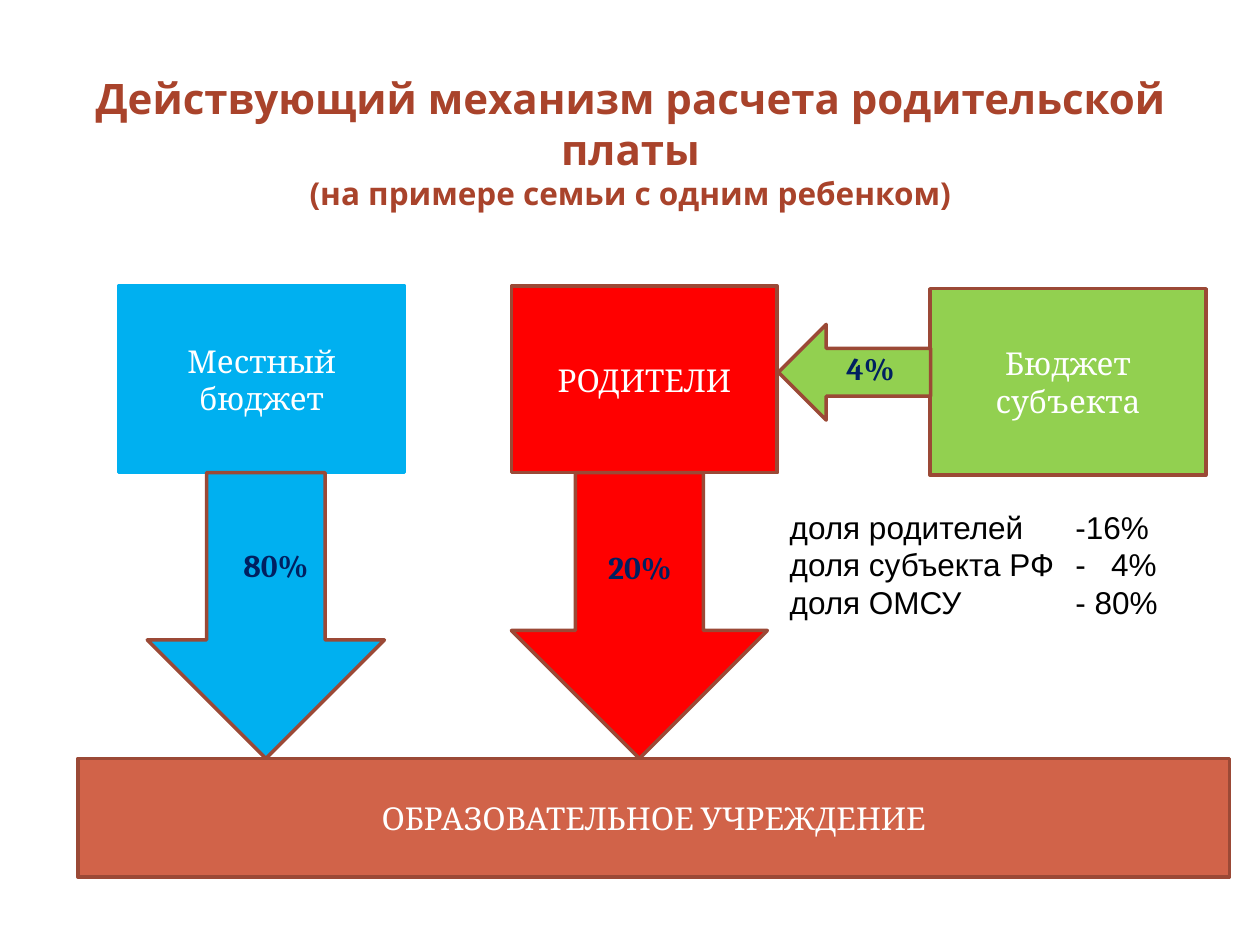
"""Build a slide on how the parental fee is shared between payers."""
from dataclasses import dataclass

from pptx import Presentation
from pptx.dml.color import RGBColor
from pptx.enum.shapes import MSO_SHAPE
from pptx.enum.text import MSO_ANCHOR, MSO_AUTO_SIZE, PP_ALIGN
from pptx.oxml import parse_xml
from pptx.oxml.ns import nsdecls
from pptx.util import Cm, Pt

RECT, DOWN = MSO_SHAPE.RECTANGLE, MSO_SHAPE.DOWN_ARROW
MIDDLE, TOP = MSO_ANCHOR.MIDDLE, MSO_ANCHOR.TOP
CENTER, LEFT = PP_ALIGN.CENTER, PP_ALIGN.LEFT
NO_FIT = MSO_AUTO_SIZE.NONE

BLUE, RED, GREEN, CLAY = "00B0F0", "FF0000", "92D050", "D16349"
EDGE, NAVY, WHITE, BLACK, RUST = "9B4936", "002060", "FFFFFF", "000000", "A9432B"

TITLE_FMT = {"name": "Open Sans", "size": Pt(24), "bold": True}
SUBTITLE_FMT = {**TITLE_FMT, "size": Pt(18)}
BLOCK_FMT = {"name": "Cambria", "size": Pt(18), "bold": False}
SHARE_FMT = {**BLOCK_FMT, "bold": True}
LIST_FMT = {**BLOCK_FMT, "name": "Arial"}


@dataclass
class Block:
    x: float
    y: float
    w: float
    h: float
    fill: str
    text: str = ""
    line: str = EDGE
    kind: int = RECT
    rotation: float = 0


@dataclass
class Share:
    x: float
    y: float
    w: float
    text: str


BLOCKS = [
    Block(2.39, 5.77, 5.77, 3.76, BLUE, "Местный бюджет", line=BLUE),
    Block(10.31, 5.77, 5.36, 3.76, RED, "РОДИТЕЛИ"),
    Block(18.75, 5.82, 5.56, 3.76, GREEN, "Бюджет субъекта"),
    Block(1.57, 15.29, 23.22, 2.39, CLAY, "ОБРАЗОВАТЕЛЬНОЕ УЧРЕЖДЕНИЕ"),
    Block(2.97, 9.53, 4.78, 5.76, BLUE, kind=DOWN),
    Block(10.31, 9.53, 5.16, 5.76, RED, kind=DOWN),
    Block(16.26, 5.97, 1.93, 3.07, GREEN, kind=DOWN, rotation=90),
]
SHARES = [
    Share(10.92, 10.92, 3.96, "20%"),
    Share(3.58, 10.87, 3.96, "80%"),
    Share(16.46, 6.91, 2.18, "4%"),
]
BREAKDOWN = [
    "доля родителей\t-16%",
    "доля субъекта РФ\t-\t4%",
    "доля ОМСУ\t- 80%",
]
TABS = [(5.76, "l"), (7.4, "r")]


def color(value: str) -> RGBColor:
    return RGBColor.from_string(value)


def add_run(p, text: str, fmt: dict, ink: str) -> None:
    r = p.add_run()
    r.text = text
    for name, value in fmt.items():
        setattr(r.font, name, value)
    r.font.color.rgb = color(ink)


def set_frame(tf, anchor, wrap: bool = True) -> None:
    for name, value in {"word_wrap": wrap, "auto_size": NO_FIT, "vertical_anchor": anchor}.items():
        setattr(tf, name, value)


def fill_title(sp) -> None:
    place = {"left": 0.99, "top": 0.58, "width": 23.44, "height": 4.57}
    for name, value in place.items():
        setattr(sp, name, Cm(value))
    set_frame(sp.text_frame, MIDDLE)
    p = sp.text_frame.paragraphs[0]
    p.alignment = CENTER
    add_run(p, "Действующий механизм расчета родительской платы", TITLE_FMT, RUST)
    p.add_line_break()
    add_run(p, "(на примере семьи с одним ребенком)", SUBTITLE_FMT, RUST)


def add_block(slide, b: Block) -> None:
    sp = slide.shapes.add_shape(b.kind, Cm(b.x), Cm(b.y), Cm(b.w), Cm(b.h))
    sp.shadow.inherit = False
    sp.rotation = b.rotation
    sp.fill.solid()
    sp.fill.fore_color.rgb = color(b.fill)
    sp.line.color.rgb = color(b.line)
    sp.line.width = Pt(2)
    if b.text:
        set_frame(sp.text_frame, MIDDLE)
        p = sp.text_frame.paragraphs[0]
        p.alignment = CENTER
        add_run(p, b.text, BLOCK_FMT, WHITE)


def add_share(slide, s: Share) -> None:
    tf = slide.shapes.add_textbox(Cm(s.x), Cm(s.y), Cm(s.w), Cm(1.02)).text_frame
    set_frame(tf, MIDDLE)
    p = tf.paragraphs[0]
    p.alignment = CENTER
    add_run(p, s.text, SHARE_FMT, NAVY)


def set_tabs(p, tabs: list[tuple[float, str]]) -> None:
    stops = "".join(f'<a:tab pos="{Cm(pos)}" algn="{algn}"/>' for pos, algn in tabs)
    p._p.get_or_add_pPr().append(parse_xml(f'<a:tabLst {nsdecls("a")}>{stops}</a:tabLst>'))


def add_breakdown(slide, rows: list[str]) -> None:
    tf = slide.shapes.add_textbox(Cm(15.67), Cm(10.11), Cm(8.33), Cm(3.33)).text_frame
    set_frame(tf, TOP)
    for i, row in enumerate(rows):
        p = tf.add_paragraph() if i else tf.paragraphs[0]
        p.alignment = LEFT
        set_tabs(p, TABS)
        add_run(p, row, LIST_FMT, BLACK)


def main() -> None:
    prs = Presentation()
    prs.slide_width, prs.slide_height = Cm(25.4), Cm(19.05)
    slide = prs.slides.add_slide(prs.slide_layouts[5])
    fill_title(slide.shapes.title)
    for b in BLOCKS:
        add_block(slide, b)
    for s in SHARES:
        add_share(slide, s)
    add_breakdown(slide, BREAKDOWN)
    prs.save("out.pptx")


if __name__ == "__main__":
    main()
